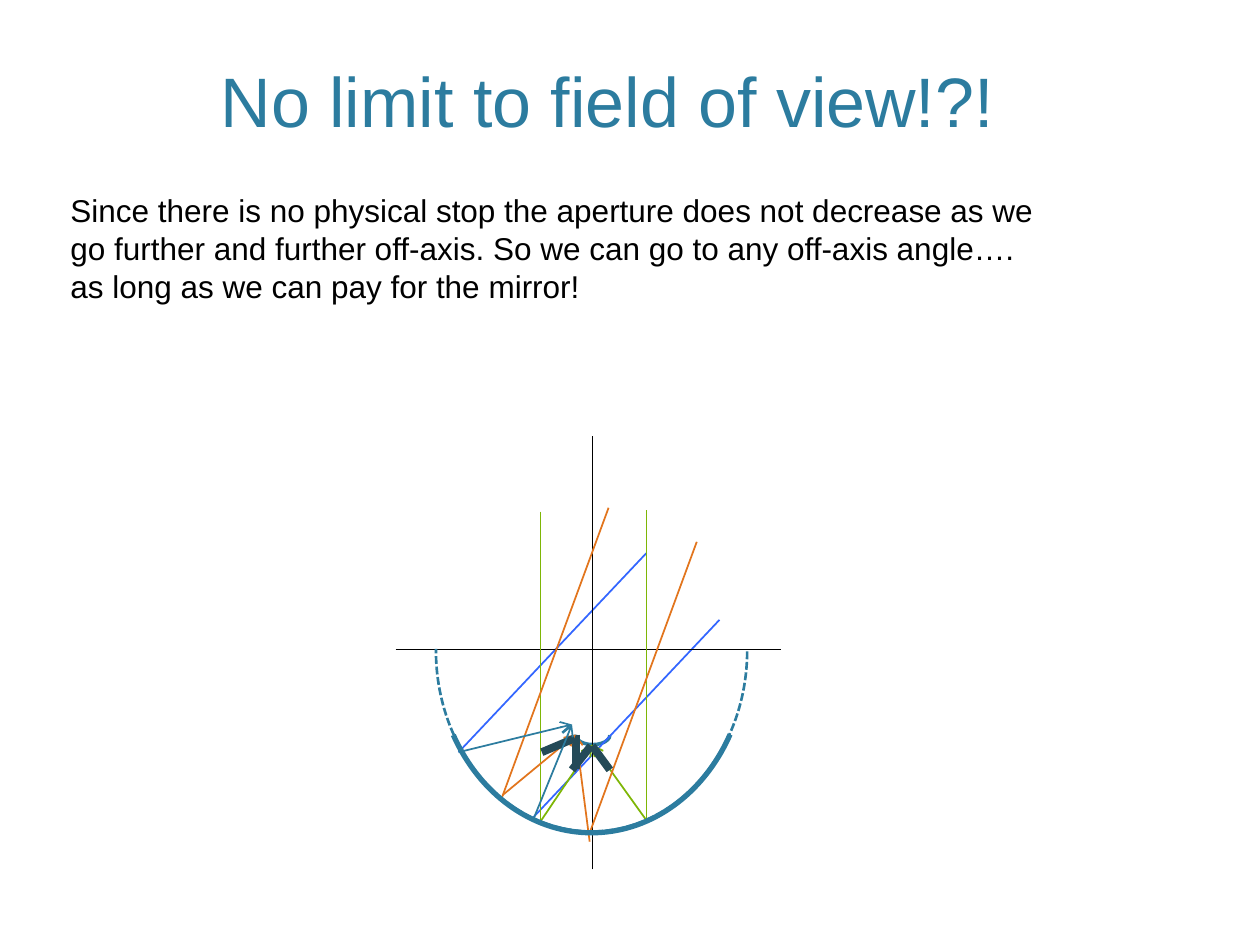
from pptx import Presentation
from pptx.dml.color import RGBColor
from pptx.enum.dml import MSO_LINE_DASH_STYLE as Dash
from pptx.enum.shapes import MSO_CONNECTOR as Connector, MSO_SHAPE as Shape
from pptx.enum.text import MSO_ANCHOR as Anchor, PP_ALIGN as Align
from pptx.oxml.ns import qn
from pptx.util import Inches, Pt
from lxml.etree import SubElement

TITLE = "No limit to field of view!?!"
BODY = ("Since there is no physical stop the aperture does not decrease as we "
        "go further and further off-axis. So we can go to any off-axis angle…. "
        "as long as we can pay for the mirror!")
TEAL, DARK, BLUE = "2C7C9F", "244A58", "3366FF"
ORANGE, GREEN, BLACK = "E2751D", "7EB606", "000000"

# Points where rays meet the mirror and the focal surface
BLUE_HIT, BLUE_FOCUS = (3.64, 5.97), (4.54, 5.75)
ORANGE_FOCUS = (4.57, 5.83)
GREEN_LEFT, GREEN_RIGHT, GREEN_FOCUS = (4.29, 6.52), (5.13, 6.51), (4.7, 5.91)

# colour, width in points, arrow at the end, [(start, end), ...]
LINES = [
    (BLUE, 1, False, [((5.13, 4.39), BLUE_HIT), ((5.71, 4.92), (4.23, 6.49))]),
    (ORANGE, 1, True, [((4.68, 6.68), ORANGE_FOCUS)]),
    (BLACK, 0.25, False, [((3.14, 5.15), (6.2, 5.15)), ((4.7, 6.9), (4.7, 3.46))]),
    (DARK, 4.5, False, [(ORANGE_FOCUS, (4.57, 6.1))]),
    (GREEN, 1, False, [((5.13, 4.05), GREEN_RIGHT), ((4.29, 4.06), GREEN_LEFT)]),
    (GREEN, 1, True, [(GREEN_RIGHT, GREEN_FOCUS), (GREEN_LEFT, GREEN_FOCUS)]),
    (ORANGE, 1, False, [((5.53, 4.3), (4.68, 6.61)), ((4.83, 4.03), (3.98, 6.34))]),
    (ORANGE, 1, True, [((3.99, 6.31), ORANGE_FOCUS)]),
    (DARK, 4.5, False, [((4.56, 5.86), (4.3, 5.97)), ((4.7, 5.92), (4.84, 6.11)),
                        ((4.54, 6.11), (4.69, 5.92))]),
    (TEAL, 1, True, [(BLUE_HIT, BLUE_FOCUS), ((4.23, 6.51), BLUE_FOCUS)]),
]
# box, start and end angle in degrees, width in points, dash
FOCAL_ARC = ((4.63, 5.7, 0.15, 0.27), 270.53, 91.71, 2, None)
MIRROR_ARCS = [
    ((3.26, 3.94, 2.87, 2.47), 300.78, 59, 3, None),
    ((3.26, 3.93, 2.87, 2.47), 270.24, 90.66, 1.5, Dash.SQUARE_DOT),
]


def rgb(value):
    return RGBColor.from_string(value)


def place(shape, box):
    shape.left, shape.top, shape.width, shape.height = map(Inches, box)


def write(shape, text, size, color, align=Align.LEFT, anchor=Anchor.TOP):
    frame = shape.text_frame
    frame.word_wrap = True
    frame.vertical_anchor = anchor
    paragraph = frame.paragraphs[0]
    paragraph.alignment = align
    run = paragraph.add_run()
    run.text = text
    run.font.name, run.font.size = "Arial", Pt(size)
    run.font.color.rgb = rgb(color)


def stroke(line, color, width):
    line.color.rgb = rgb(color)
    line.width = Pt(width)


def draw_line(slide, start, end, color, width, arrow):
    ray = slide.shapes.add_connector(Connector.STRAIGHT, *map(Inches, start + end))
    stroke(ray.line, color, width)
    if arrow:
        SubElement(ray.line._get_or_add_ln(), qn("a:tailEnd"), type="arrow")
    SubElement(ray._element.spPr, qn("a:effectLst"))


def draw_arc(slide, box, start, end, width, dash):
    """Draw an arc turned a quarter, so that angle 0 points down."""
    arc = slide.shapes.add_shape(Shape.ARC, *map(Inches, box))
    arc.rotation = 90
    # Arc adjustments count 60000ths of a degree, scaled by 100000
    arc.adjustments[0], arc.adjustments[1] = start * 0.6, end * 0.6
    arc.shadow.inherit = False
    arc.fill.background()
    stroke(arc.line, TEAL, width)
    if dash:
        arc.line.dash_style = dash


def main():
    deck = Presentation()
    deck.slide_width, deck.slide_height = Inches(10), Inches(7.5)
    slide = deck.slides.add_slide(deck.slide_layouts[5])

    title = slide.shapes.title
    place(title, (0.89, 0.49, 7.86, 0.68))
    write(title, TITLE, 40, TEAL, align=Align.CENTER, anchor=Anchor.BOTTOM)
    body = slide.shapes.add_textbox(*map(Inches, (0.46, 1.47, 8, 1.01)))
    write(body, BODY, 18, BLACK)

    draw_arc(slide, *FOCAL_ARC)
    for color, width, arrow, segments in LINES:
        for start, end in segments:
            draw_line(slide, start, end, color, width, arrow)
    for arc in MIRROR_ARCS:
        draw_arc(slide, *arc)

    deck.save("out.pptx")


if __name__ == "__main__":
    main()
